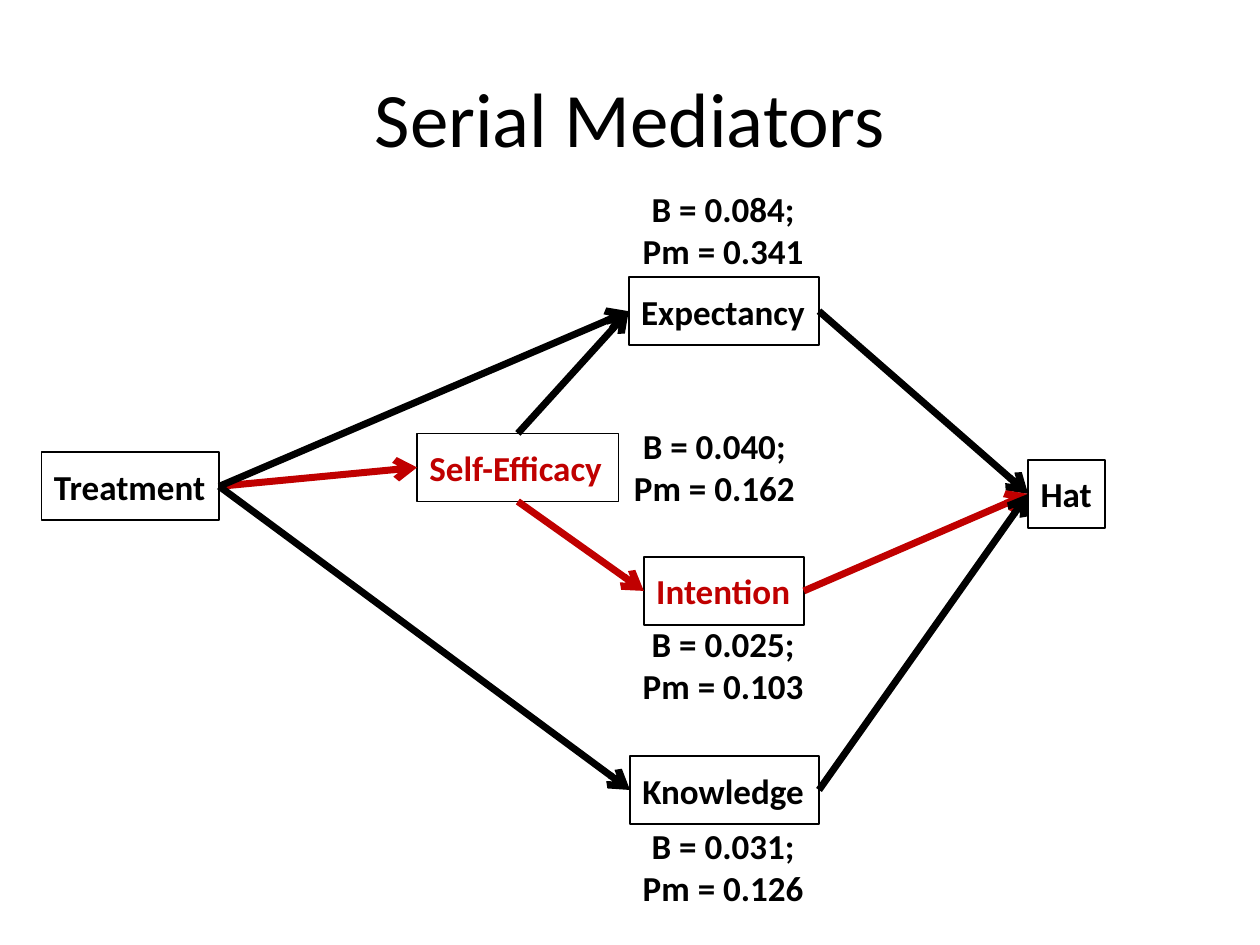
from dataclasses import dataclass

from lxml import etree
from pptx import Presentation
from pptx.dml.color import RGBColor
from pptx.enum.shapes import MSO_CONNECTOR, MSO_SHAPE
from pptx.enum.text import MSO_ANCHOR, MSO_AUTO_SIZE, PP_ALIGN
from pptx.oxml.ns import qn
from pptx.util import Inches, Pt

BLACK = RGBColor(0x00, 0x00, 0x00)
RED = RGBColor(0xC0, 0x00, 0x00)
FONT = "Calibri"
BOX_H = 0.54
LABEL_W, LABEL_H = 1.5, 0.75
INSET = Inches(0.1)
TOP, LEFT, BOTTOM, RIGHT = range(4)  # connection sites of a rectangle


@dataclass
class Box:
    text: str
    x: float
    y: float
    w: float
    color: RGBColor = BLACK


@dataclass
class Label:
    text: str
    x: float
    y: float


@dataclass
class Arrow:
    start: str
    end: str
    color: RGBColor = BLACK
    start_site: int = RIGHT


BOXES = [
    Box("Treatment", 0.33, 3.59, 1.41),
    Box("Self-Efficacy", 3.31, 3.44, 1.6, RED),
    Box("Hat", 8.16, 3.65, 0.61),
    Box("Expectancy", 4.99, 2.2, 1.51),
    Box("Intention", 5.11, 4.42, 1.27, RED),
    Box("Knowledge", 5, 6, 1.5),
]
LABELS = [
    Label("B = 0.084; Pm = 0.341", 4.99, 1.45),
    Label("B = 0.040;\nPm = 0.162", 4.92, 3.33),
    Label("B = 0.025;\nPm = 0.103", 4.99, 4.9),
    Label("B = 0.031;\nPm = 0.126", 4.99, 6.5),
]
ARROWS = [
    Arrow("Treatment", "Self-Efficacy", RED),
    Arrow("Expectancy", "Hat"),
    Arrow("Intention", "Hat", RED),
    Arrow("Treatment", "Knowledge"),
    Arrow("Knowledge", "Hat"),
    Arrow("Self-Efficacy", "Expectancy", BLACK, TOP),
    Arrow("Self-Efficacy", "Intention", RED, BOTTOM),
    Arrow("Treatment", "Expectancy"),
]


def write(sp, text: str, align, size: int = 20, bold: bool = True,
          color: RGBColor = BLACK, wrap: bool = True) -> None:
    tf = sp.text_frame
    frame_format = {
        "word_wrap": wrap, "vertical_anchor": MSO_ANCHOR.MIDDLE,
        "auto_size": MSO_AUTO_SIZE.NONE,
        "margin_left": INSET, "margin_right": INSET,
        "margin_top": INSET, "margin_bottom": INSET,
    }
    for name, value in frame_format.items():
        setattr(tf, name, value)
    p = tf.paragraphs[0]
    p.text = text
    p.alignment = align
    for r in p.runs:
        for name, value in {"name": FONT, "size": Pt(size), "bold": bold}.items():
            setattr(r.font, name, value)
        r.font.color.rgb = color


def add_box(s, box: Box):
    sp = s.shapes.add_shape(MSO_SHAPE.RECTANGLE, Inches(box.x), Inches(box.y),
                            Inches(box.w), Inches(BOX_H))
    sp.shadow.inherit = False
    sp.fill.background()
    sp.line.color.rgb = BLACK
    sp.line.width = Pt(1)
    write(sp, box.text, PP_ALIGN.LEFT, color=box.color, wrap=False)
    return sp


def add_label(s, label: Label) -> None:
    sp = s.shapes.add_textbox(Inches(label.x), Inches(label.y),
                              Inches(LABEL_W), Inches(LABEL_H))
    write(sp, label.text, PP_ALIGN.CENTER)


def add_arrow(s, arrow: Arrow, shapes: dict) -> None:
    line = s.shapes.add_connector(MSO_CONNECTOR.STRAIGHT, 0, 0, 0, 0)
    line.begin_connect(shapes[arrow.start], arrow.start_site)
    line.end_connect(shapes[arrow.end], LEFT)
    line.line.color.rgb = arrow.color
    line.line.width = Pt(4)
    etree.SubElement(line.line._get_or_add_ln(), qn("a:tailEnd"), type="arrow")
    etree.SubElement(line._element.spPr, qn("a:effectLst"))


def main() -> None:
    prs = Presentation()
    prs.slide_width, prs.slide_height = Inches(10), Inches(7.5)
    s = prs.slides.add_slide(prs.slide_layouts[6])

    # Title
    title = s.shapes.add_textbox(Inches(0.5), Inches(0.3), Inches(9), Inches(1.25))
    write(title, "Serial Mediators", PP_ALIGN.CENTER, size=44, bold=False)

    # Variables, joined by the paths between them
    shapes = {box.text: add_box(s, box) for box in BOXES}
    for arrow in ARROWS:
        add_arrow(s, arrow, shapes)

    # Effect sizes
    for label in LABELS:
        add_label(s, label)

    prs.save("out.pptx")


if __name__ == "__main__":
    main()
